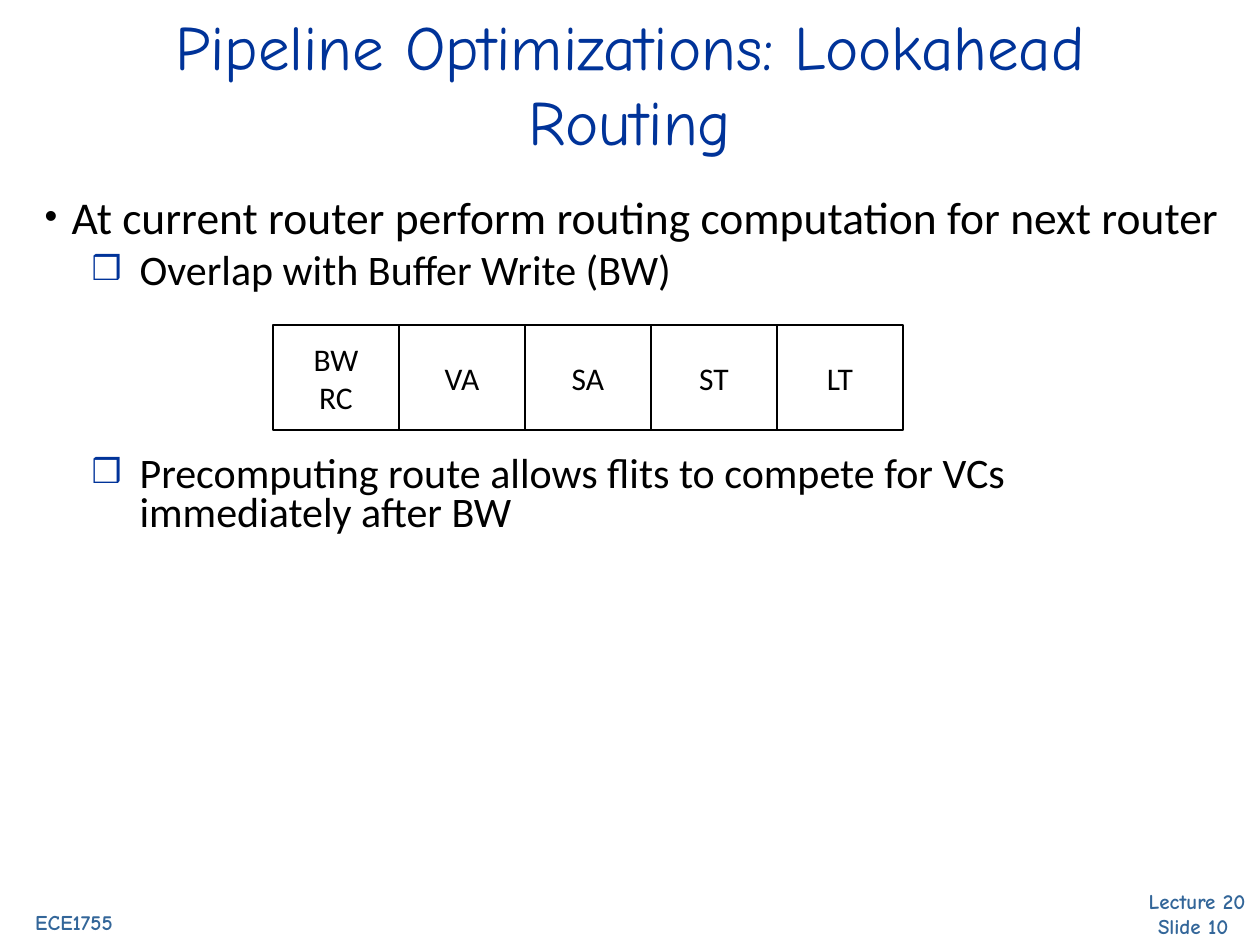
"""Build the lookahead routing slide."""
from lxml import etree
from pptx import Presentation, util as u
from pptx.dml.color import RGBColor
from pptx.enum import shapes, text
from pptx.oxml import ns

BLUE = RGBColor(0x00, 0x33, 0x99)
STEEL = RGBColor(0x33, 0x66, 0x99)
BLACK = RGBColor(0, 0, 0)
WHITE = RGBColor(255, 255, 255)
COMIC, SANS = "Comic Neue", "Calibri"
MID = text.PP_ALIGN.CENTER

TITLE = "Pipeline Optimizations: Lookahead Routing"
BULLETS = [
    (0, 0, "At current router perform routing computation for next router"),
    (1, 7, "Overlap with Buffer Write (BW)"),
    (1, 94, "Precomputing route allows flits to compete for VCs immediately after BW"),
]
LEVELS = [
    dict(size=26, line=24, left=27, hang=27, mark="•", color=BLACK),
    dict(size=24, line=22, left=95, hang=48, mark="❒", color=BLUE),
]
STAGES = [["BW", "RC"], ["VA"], ["SA"], ["ST"], ["LT"]]
ROW = (273, 325, 126, 105)
FOOTERS = [
    ("Lecture 20 Slide 10 ", (1113, 882, 168, 63)),
    ("ECE1755", (-10, 903, 168, 38)),
]


def px(n):
    return u.Emu(round(n * 914400 / 126))


def place(shape, box):
    shape.left, shape.top, shape.width, shape.height = map(px, box)


def write(para, words, size, face, color, bold=False):
    run = para.add_run()
    run.text = words
    font = run.font
    font.size, font.name, font.bold = u.Pt(size), face, bold
    font.color.rgb = color


def paras(frame, items):
    for i, item in enumerate(items):
        yield (frame.add_paragraph() if i else frame.paragraphs[0]), item


def bullet(para, left, hang, mark, color):
    props = para._p.get_or_add_pPr()
    props.set("marL", str(px(left)))
    props.set("indent", str(-px(hang)))
    tint = etree.SubElement(props, ns.qn("a:buClr"))
    etree.SubElement(tint, ns.qn("a:srgbClr")).set("val", str(color))
    etree.SubElement(props, ns.qn("a:buSzPct")).set("val", "80000")
    etree.SubElement(props, ns.qn("a:buChar")).set("char", mark)


def head(slide):
    shape = slide.shapes.title
    place(shape, (63, 4, 1134, 158))
    frame = shape.text_frame
    frame.auto_size = text.MSO_AUTO_SIZE.NONE
    frame.vertical_anchor = text.MSO_ANCHOR.MIDDLE
    para = frame.paragraphs[0]
    para.alignment = MID
    write(para, TITLE, 36, COMIC, BLUE)


def body(slide):
    shape = slide.placeholders[1]
    place(shape, (32, 195, 1207, 680))
    frame = shape.text_frame
    frame.auto_size = text.MSO_AUTO_SIZE.NONE
    for para, (level, gap, words) in paras(frame, BULLETS):
        look = LEVELS[level]
        para.level = level
        para.line_spacing = u.Pt(look["line"])
        para.space_before = u.Pt(gap)
        bullet(para, look["left"], look["hang"], look["mark"], look["color"])
        write(para, words, look["size"], SANS, BLACK)


def stages(slide):
    left, top, wide, high = ROW
    for i, lines in enumerate(STAGES):
        shape = slide.shapes.add_shape(
            shapes.MSO_SHAPE.RECTANGLE,
            *map(px, (left + i * wide, top, wide, high)))
        shape.shadow.inherit = False
        shape.fill.background()
        shape.line.color.rgb = BLACK
        shape.line.width = u.Pt(0.75)
        frame = shape.text_frame
        frame.vertical_anchor = text.MSO_ANCHOR.MIDDLE
        for para, words in paras(frame, lines):
            para.alignment = MID
            write(para, words, 18, SANS, BLACK)


def foot(slide):
    for words, box in FOOTERS:
        frame = slide.shapes.add_textbox(*map(px, box)).text_frame
        frame.word_wrap = True
        para = frame.paragraphs[0]
        para.alignment = MID
        write(para, words, 12, COMIC, STEEL, True)


def main():
    deck = Presentation()
    deck.slide_width, deck.slide_height = px(1260), px(945)
    slide = deck.slides.add_slide(deck.slide_layouts[1])
    slide.background.fill.solid()
    slide.background.fill.fore_color.rgb = WHITE
    for draw in (foot, head, body, stages):
        draw(slide)
    deck.save("out.pptx")


if __name__ == "__main__":
    main()
